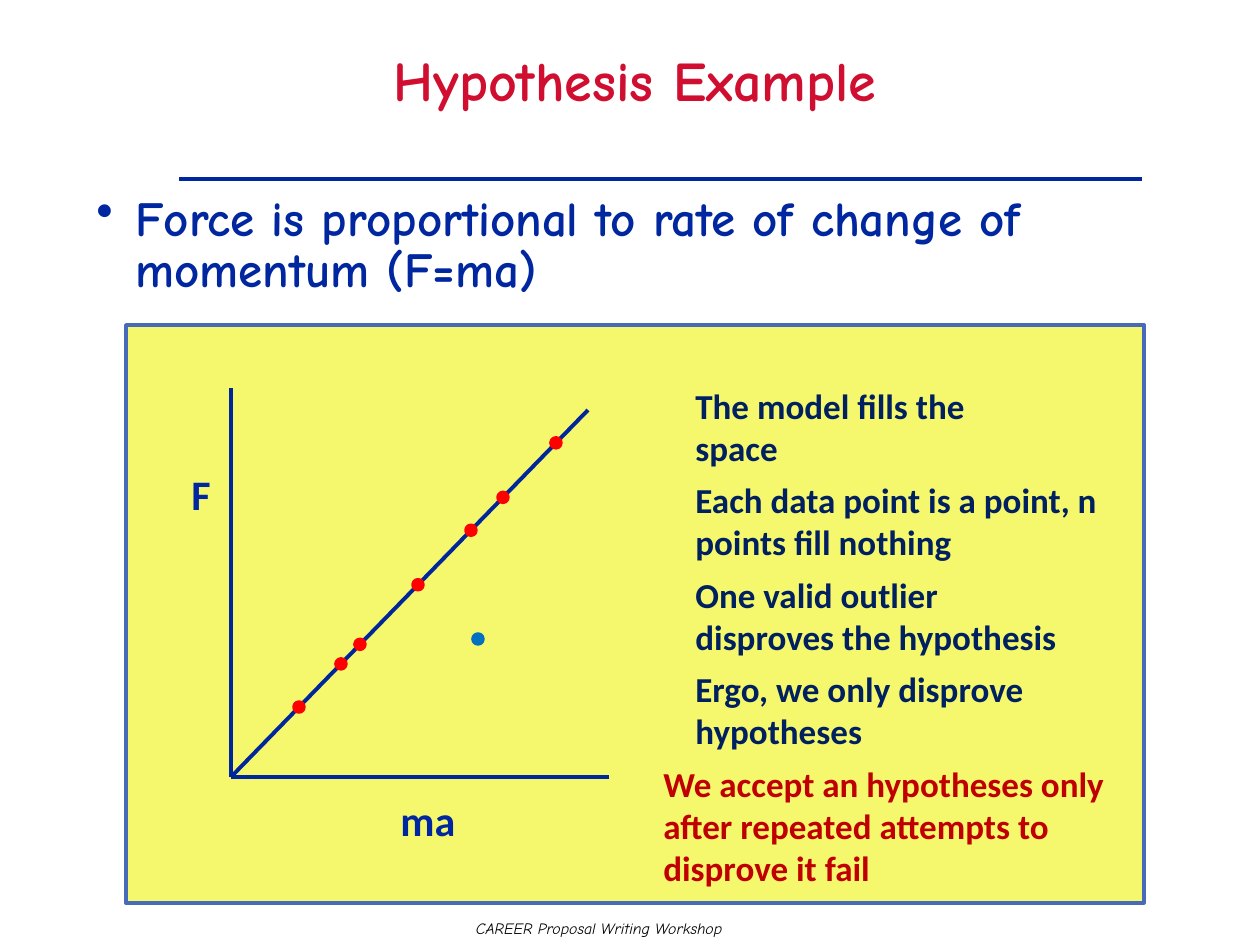
from lxml import etree
from pptx import Presentation
from pptx.dml.color import RGBColor
from pptx.enum.shapes import MSO_CONNECTOR, MSO_SHAPE
from pptx.enum.text import MSO_ANCHOR, PP_ALIGN
from pptx.oxml import parse_xml
from pptx.oxml.ns import nsdecls, qn
from pptx.util import Emu, Pt

CENTER, LEFT = PP_ALIGN.CENTER, PP_ALIGN.LEFT
TOP, MIDDLE = MSO_ANCHOR.TOP, MSO_ANCHOR.MIDDLE
RECT, OVAL = MSO_SHAPE.RECTANGLE, MSO_SHAPE.OVAL
STRAIGHT = MSO_CONNECTOR.STRAIGHT

BLACK = RGBColor(0x00, 0x00, 0x00)
BLUE = RGBColor(0x00, 0x27, 0x9F)
AXIS_BLUE = RGBColor(0x00, 0x26, 0x9B)
CRIMSON = RGBColor(0xCF, 0x0E, 0x30)
YELLOW = RGBColor(0xF5, 0xF8, 0x6C)
PANEL_EDGE = RGBColor(0x48, 0x6A, 0xBB)
NAVY = RGBColor(0x00, 0x20, 0x60)
DARK_RED = RGBColor(0xC0, 0x00, 0x00)
POINT_RED = RGBColor(0xFF, 0x00, 0x00)
OUTLIER_BLUE = RGBColor(0x00, 0x70, 0xC0)

HAND, SANS = "Comic Neue", "Calibri"

TITLE = "Hypothesis Example"
BULLET = "Force is proportional to rate of change of momentum (F=ma)"
FOOTER = "CAREER Proposal Writing Workshop"
AXIS_LABELS = [("F", 179, 462, 73), ("ma", 388, 788, 105)]
# text, left, width, colour
REMARKS = [
    ("The model fills the space", 683, 346, NAVY),
    ("Each data point is a point, n points fill nothing", 683, 441, NAVY),
    ("One valid outlier disproves the hypothesis", 683, 410, NAVY),
    ("Ergo, we only disprove hypotheses", 683, 410, NAVY),
    ("We accept an hypotheses only after repeated attempts to disprove it fail",
     651, 514, DARK_RED),
]
REMARK_TOP, REMARK_STEP = 378, 94.5

ORIGIN = (231, 777)
F_AXIS_END = (231, 388)
MA_AXIS_END = (609, 777)
MODEL_END = (588, 410)
POINT_XS = [299, 341, 360, 418, 471, 503, 556]
OUTLIER = (478, 639)
DOT = 10


def px(n):
    return Emu(round(n * 914400 / 126))


def add_text(text, box, size, color, font=SANS, bold=True, italic=False,
             align=LEFT, anchor=TOP):
    tb = slide.shapes.add_textbox(*map(px, box))
    tf = tb.text_frame
    tf.word_wrap = True
    tf.vertical_anchor = anchor
    tf.text = text
    p = tf.paragraphs[0]
    p.alignment = align
    f = p.runs[0].font
    f.size, f.name, f.bold, f.italic = Pt(size), font, bold, italic
    f.color.rgb = color
    return p


def add_line(start, end, color, width):
    c = slide.shapes.add_connector(STRAIGHT, *map(px, start + end))
    c.line.color.rgb = color
    c.line.width = Pt(width)
    etree.SubElement(c._element.spPr, qn("a:effectLst"))


def add_shape(kind, box, fill, edge):
    s = slide.shapes.add_shape(kind, *map(px, box))
    s.shadow.inherit = False
    s.fill.solid()
    s.fill.fore_color.rgb = fill
    s.line.color.rgb = edge
    s.line.width = Pt(2)


def add_dot(x, y, color):
    add_shape(OVAL, (x - DOT / 2, y - DOT / 2, DOT, DOT), color, color)


def add_text_shadow(run):
    fill = run.font._element.find(qn("a:solidFill"))
    fill.addnext(parse_xml(
        f'<a:effectLst {nsdecls("a")}><a:outerShdw dist="25400" dir="2700000">'
        '<a:srgbClr val="808080"/></a:outerShdw></a:effectLst>'))


def add_bullet(p):
    pPr = p._p.get_or_add_pPr()
    pPr.set("marL", str(px(39)))
    pPr.set("indent", str(-px(39)))
    etree.SubElement(pPr, qn("a:buChar")).set("char", "•")


def model_y(x):
    """Height of the F = ma line at x."""
    slope = (MODEL_END[1] - ORIGIN[1]) / (MODEL_END[0] - ORIGIN[0])
    return ORIGIN[1] + slope * (x - ORIGIN[0])


prs = Presentation()
prs.slide_width, prs.slide_height = px(1260), px(945)
slide = prs.slides.add_slide(prs.slide_layouts[6])

add_text(FOOTER, (305, 913, 588, 32), 9, BLACK, HAND, bold=False, italic=True,
         align=CENTER)
add_line((179, 179), (1142, 179), BLUE, 2)

p = add_text(TITLE, (126, 0, 1018, 168), 32, CRIMSON, HAND, align=CENTER,
             anchor=MIDDLE)
p.line_spacing = 0.87
add_text_shadow(p.runs[0])

p = add_text(BULLET, (84, 189, 1092, 120), 28, BLUE, HAND)
p.line_spacing = 0.87
add_bullet(p)

add_shape(RECT, (126, 325, 1018, 578), YELLOW, PANEL_EDGE)
for end in (F_AXIS_END, MA_AXIS_END, MODEL_END):
    add_line(ORIGIN, end, AXIS_BLUE, 2.25)
for text, x, y, w in AXIS_LABELS:
    add_text(text, (x, y, w, 63), 24, BLUE)
for x in POINT_XS:
    add_dot(x, model_y(x), POINT_RED)
add_dot(*OUTLIER, OUTLIER_BLUE)

for i, (text, x, w, color) in enumerate(REMARKS):
    add_text(text, (x, REMARK_TOP + i * REMARK_STEP, w, 97), 20, color)

prs.save("out.pptx")
